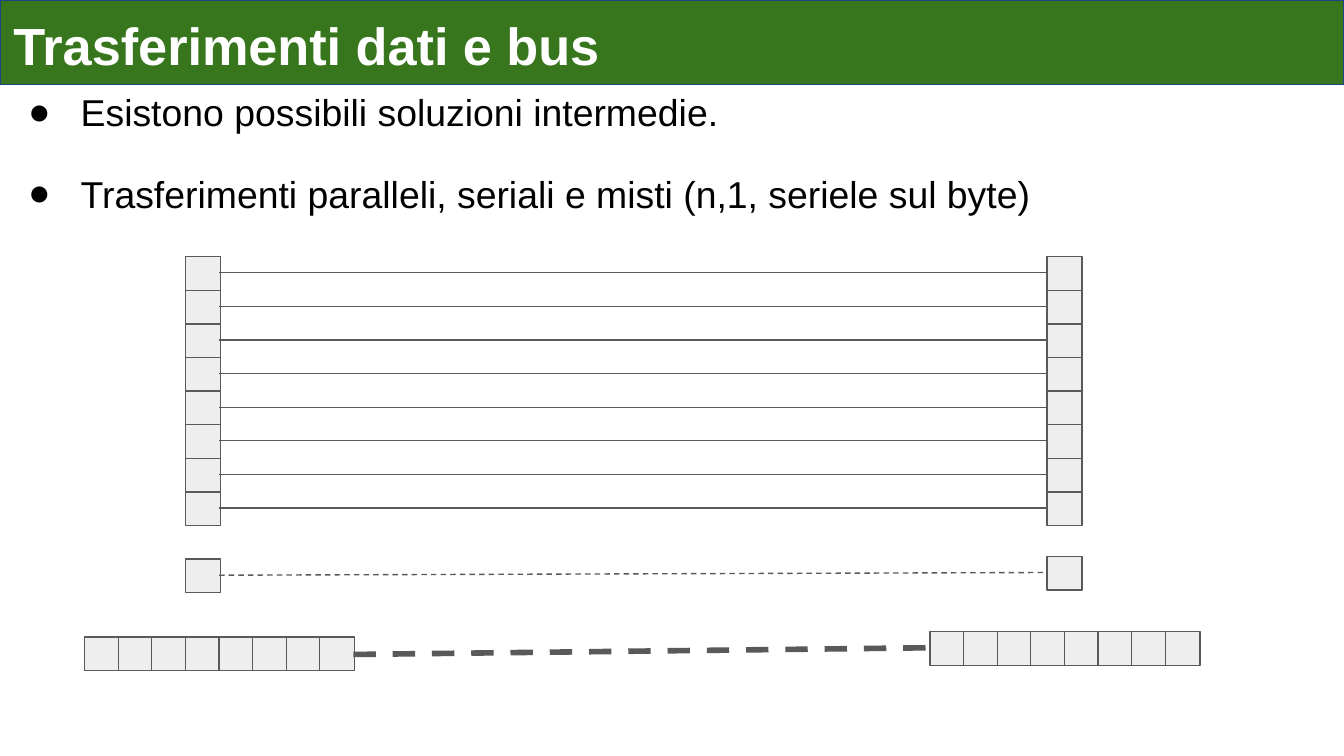
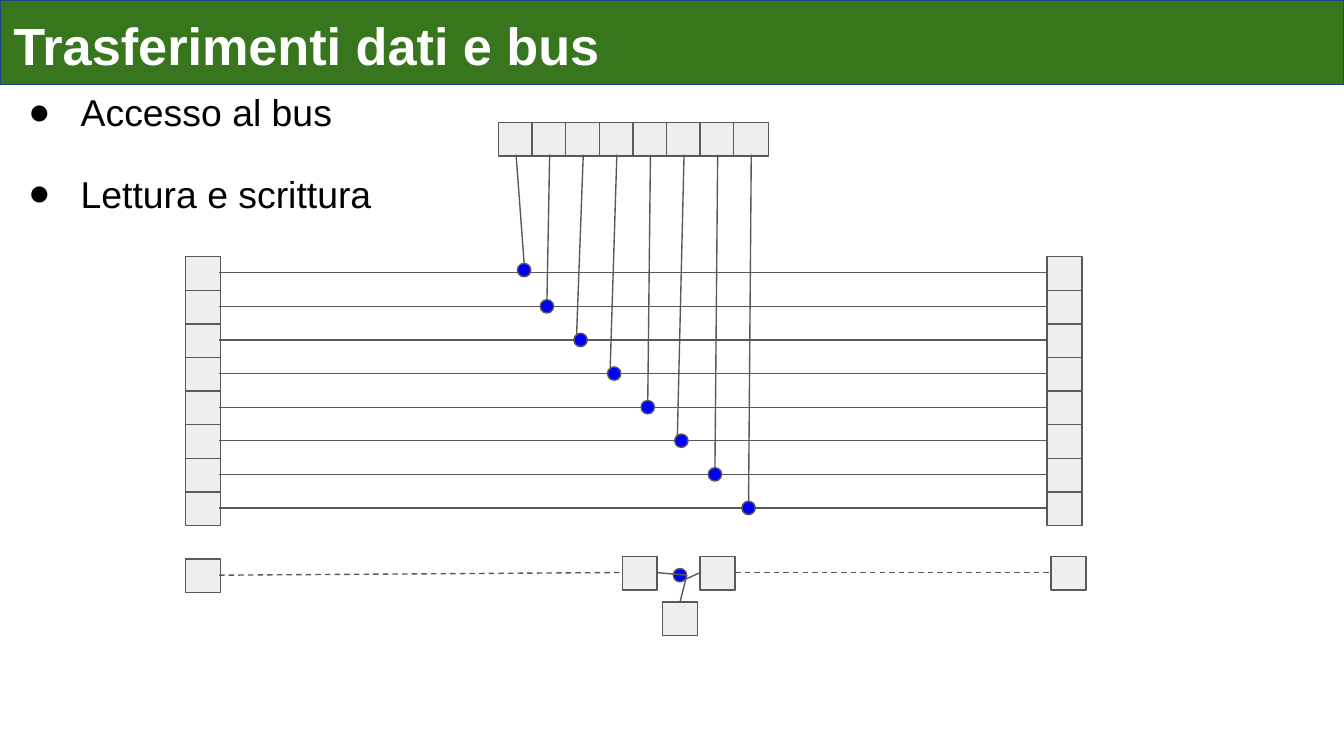
from lxml import etree
from pptx import Presentation
from pptx.dml.color import RGBColor
from pptx.enum.dml import MSO_LINE
from pptx.enum.shapes import MSO_CONNECTOR, MSO_SHAPE
from pptx.enum.text import MSO_ANCHOR, MSO_AUTO_SIZE, PP_ALIGN
from pptx.oxml.ns import qn
from pptx.util import Emu, Pt

TITLE = "Trasferimenti dati e bus"
TRANSFER_POINTS = [
    "Esistono possibili soluzioni intermedie.",
    "Trasferimenti paralleli, seriali e misti (n,1, seriele sul byte)",
]
ACCESS_POINTS = ["Accesso al bus", "Lettura e scrittura"]

GREEN = RGBColor(0x38, 0x76, 0x1D)
NAVY = RGBColor(0x1C, 0x45, 0x87)
WHITE = RGBColor(0xFF, 0xFF, 0xFF)
BLACK = RGBColor(0x00, 0x00, 0x00)
PALE = RGBColor(0xEE, 0xEE, 0xEE)
GRAY = RGBColor(0x59, 0x59, 0x59)
BLUE = RGBColor(0x00, 0x00, 0xFF)
FONT = "Arial"
THIN, THICK = 0.75, 3

RECT, OVAL = MSO_SHAPE.RECTANGLE, MSO_SHAPE.OVAL
STRAIGHT = MSO_CONNECTOR.STRAIGHT
DASH = MSO_LINE.DASH
LEFT = PP_ALIGN.LEFT
TOP = MSO_ANCHOR.TOP
NO_FIT = MSO_AUTO_SIZE.NONE

PX = 9144
SLIDE_W = 1000
SLIDE_H = SLIDE_W * 9 / 16
BAND_H, BODY_H = 63, 109
INSET = 10
BITS = 8
CELL_W, CELL_H, PITCH = 26, 25, 25
DOT = 10
SENDER_X, RECEIVER_X, BUS_Y = 138, 779, 191
WIRE_X = SENDER_X + PITCH
DEVICE_X, DEVICE_Y = 371, 91
TAPS = [(385, 196)] + [(402 + PITCH * i, 223 + PITCH * i) for i in range(BITS - 1)]
SIDE_TAPS = {2, 3, 5}


def px(length):
    return Emu(round(length * PX))


def place(part, left, top, width, height):
    part.left, part.top = px(left), px(top)
    part.width, part.height = px(width), px(height)


def paint(part, fill, line):
    part.fill.solid()
    part.fill.fore_color.rgb = fill
    part.line.color.rgb = line
    part.line.width = Pt(THIN)


def style(paragraph, size, color, bold):
    paragraph.alignment = LEFT
    for run in paragraph.runs:
        font = run.font
        font.name, font.size, font.bold = FONT, Pt(size), bold
        font.color.rgb = color


def prepare_frame(frame):
    frame.word_wrap = True
    frame.auto_size = NO_FIT
    frame.vertical_anchor = TOP
    frame.margin_left = frame.margin_right = px(INSET)
    frame.margin_top = frame.margin_bottom = px(INSET)


def add_bullet(paragraph):
    properties = paragraph._p.get_or_add_pPr()
    properties.set("marL", str(px(50)))
    properties.set("indent", str(px(-39)))
    color = etree.SubElement(properties, qn("a:buClr"))
    etree.SubElement(color, qn("a:srgbClr"), val=str(BLACK))
    etree.SubElement(properties, qn("a:buFont"), typeface=FONT)
    etree.SubElement(properties, qn("a:buChar"), char="●")


def add_slide(deck, points):
    slide = deck.slides.add_slide(deck.slide_layouts[1])
    title, body = slide.placeholders
    place(title, 0, 0, SLIDE_W, BAND_H)
    paint(title, GREEN, NAVY)
    prepare_frame(title.text_frame)
    title.text_frame.text = TITLE
    style(title.text_frame.paragraphs[0], 28, WHITE, True)

    place(body, 0, BAND_H, SLIDE_W, BODY_H)
    prepare_frame(body.text_frame)
    body.text_frame.text = "\n".join(points)
    for index, paragraph in enumerate(body.text_frame.paragraphs):
        style(paragraph, 20, BLACK, False)
        paragraph.line_spacing = 0.8
        paragraph.space_before = Pt(24.5 if index else 5.9)
        add_bullet(paragraph)
    return slide


def add_part(slide, preset, left, top, width, height, fill):
    part = slide.shapes.add_shape(preset, px(left), px(top), px(width), px(height))
    part.shadow.inherit = False
    paint(part, fill, GRAY)


def add_cell(slide, left, top):
    add_part(slide, RECT, left, top, CELL_W, CELL_H, PALE)


def add_dot(slide, left, top):
    add_part(slide, OVAL, left, top, DOT, DOT, BLUE)


def add_row(slide, left, top):
    for bit in range(BITS):
        add_cell(slide, left + bit * PITCH, top)


def add_wire(slide, start, end, width=THIN, dash=None):
    wire = slide.shapes.add_connector(STRAIGHT, *map(px, start + end))
    wire.line.color.rgb = GRAY
    wire.line.width = Pt(width)
    if dash is not None:
        wire.line.dash_style = dash
    etree.SubElement(wire._element.spPr, qn("a:effectLst"))


def add_parallel_bus(slide):
    for bit in range(BITS):
        top = BUS_Y + bit * PITCH
        add_cell(slide, SENDER_X, top)
        add_cell(slide, RECEIVER_X, top)
        add_wire(slide, (WIRE_X, top + 12), (RECEIVER_X, top + 12))


def build_transfers(deck):
    slide = add_slide(deck, TRANSFER_POINTS)
    add_parallel_bus(slide)
    add_cell(slide, SENDER_X, 416)
    add_cell(slide, RECEIVER_X, 414)
    add_wire(slide, (WIRE_X, 428), (RECEIVER_X, 426), dash=DASH)
    add_row(slide, 63, 474)
    add_row(slide, 692, 470)
    add_wire(slide, (263, 487), (692, 482), THICK, DASH)


def build_access(deck):
    slide = add_slide(deck, ACCESS_POINTS)
    add_parallel_bus(slide)
    add_row(slide, DEVICE_X, DEVICE_Y)
    for left, top in TAPS:
        add_dot(slide, left, top)
    for bit, (left, top) in enumerate(TAPS):
        tap = (left + 2, top + 2) if bit in SIDE_TAPS else (left + DOT // 2, top)
        add_wire(slide, tap, (DEVICE_X + 13 + bit * PITCH, 115))

    for left, top in [(SENDER_X, 416), (463, 414), (521, 414), (782, 414), (493, 448)]:
        add_cell(slide, left, top)
    add_dot(slide, 501, 423)
    for start, end in [((488, 426), (511, 428)), ((510, 431), (521, 426)),
                       ((511, 428), (506, 448))]:
        add_wire(slide, start, end)
    for start, end in [((WIRE_X, 428), (463, 426)), ((547, 426), (782, 426))]:
        add_wire(slide, start, end, dash=DASH)


def main():
    deck = Presentation()
    deck.slide_width, deck.slide_height = px(SLIDE_W), px(SLIDE_H)
    build_transfers(deck)
    build_access(deck)
    deck.save("out.pptx")


if __name__ == "__main__":
    main()
